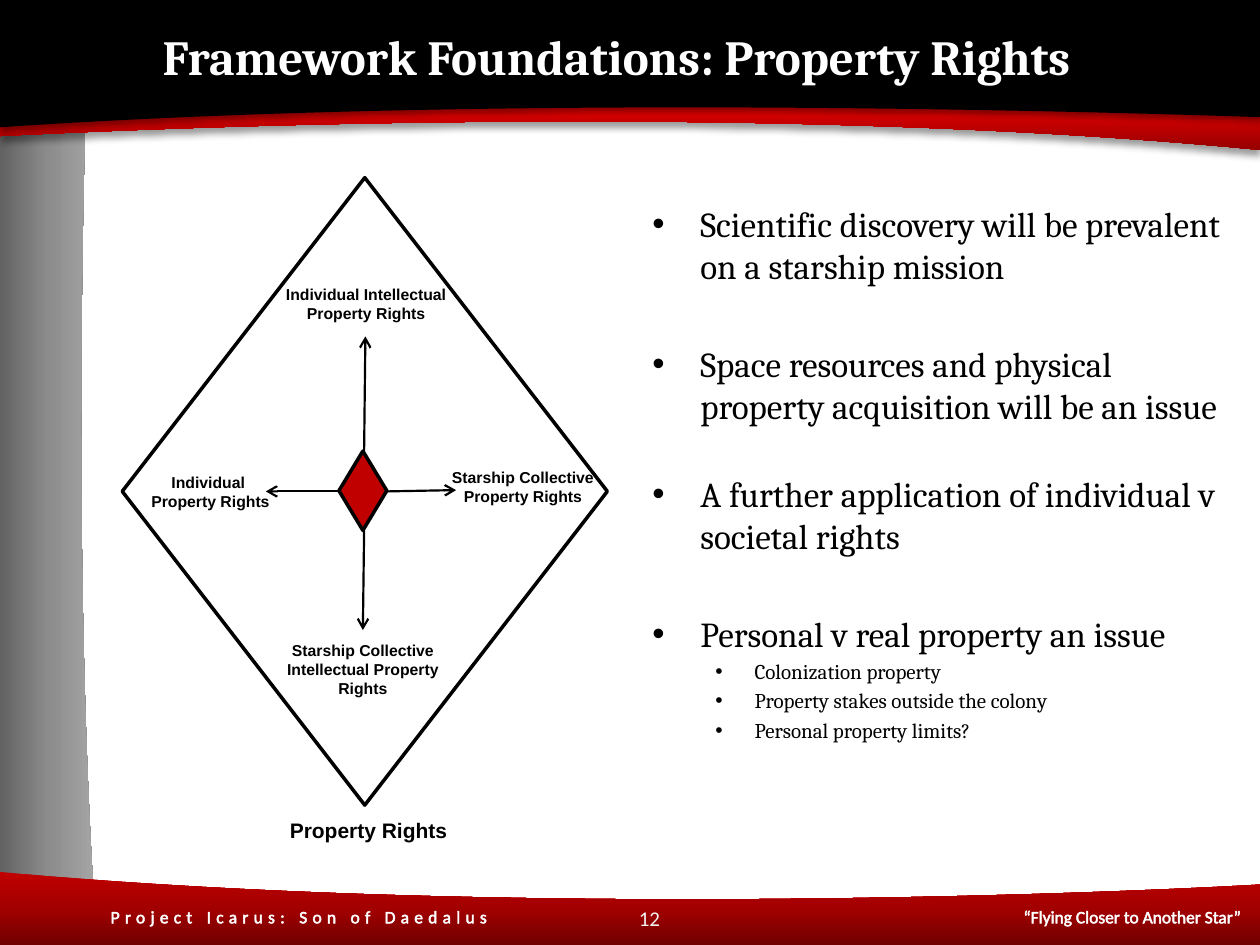
from lxml import etree
from pptx import Presentation
from pptx.dml.color import RGBColor
from pptx.enum.shapes import MSO_CONNECTOR as CONN, MSO_SHAPE as SHAPE
from pptx.enum.text import MSO_ANCHOR as ANCHOR, PP_ALIGN as ALIGN
from pptx.oxml import parse_xml
from pptx.oxml.ns import nsdecls, qn
from pptx.util import Inches, Pt

BLACK = RGBColor(0x00, 0x00, 0x00)
WHITE = RGBColor(0xFF, 0xFF, 0xFF)
PALE = RGBColor(0xF2, 0xF2, 0xF2)
RED = RGBColor(0xC0, 0x00, 0x00)
GREYS = ("626262", "8C8C8C", "A6A6A6")
TOP_REDS = ("FF0000", "D70000", "970000")
BOTTOM_REDS = ("C00000", "A20000", "720000")

prs = Presentation()
prs.slide_width, prs.slide_height = Inches(10), Inches(7.5)
s = prs.slides.add_slide(prs.slide_layouts[5])


def add_band(curve, corners, colors, angle=90, shadow=None):
    """Area between a cubic curve (four points) and the given corners."""
    points = [(Inches(x), Inches(y)) for x, y in curve + corners]
    builder = s.shapes.build_freeform(*points[0])
    builder.add_line_segments(points[1:], close=True)
    sp = builder.convert_to_shape()
    sp.shadow.inherit = False
    sp.line.fill.background()
    sp.fill.solid()
    sp.fill.fore_color.rgb = BLACK
    props = sp._element.spPr
    # The first three segments become one Bezier curve
    segments = list(props.iter(qn("a:lnTo")))[:3]
    bezier = etree.Element(qn("a:cubicBezTo"))
    segments[0].addprevious(bezier)
    for segment in segments:
        bezier.append(segment[0])
        segment.getparent().remove(segment)
    if colors:
        stops = "".join(f'<a:gs pos="{i * 50000}"><a:srgbClr val="{c}"/></a:gs>'
                        for i, c in enumerate(colors))
        props.replace(props.find(qn("a:solidFill")), parse_xml(
            f'<a:gradFill {nsdecls("a")}><a:gsLst>{stops}</a:gsLst>'
            f'<a:lin ang="{angle * 60000}" scaled="0"/></a:gradFill>'))
    if shadow:
        blur, dist, alpha = shadow
        props.find(qn("a:effectLst")).append(parse_xml(
            f'<a:outerShdw {nsdecls("a")} blurRad="{Pt(blur)}" dist="{Pt(dist)}" '
            f'dir="5400000" rotWithShape="0"><a:srgbClr val="000000">'
            f'<a:alpha val="{alpha * 1000}"/></a:srgbClr></a:outerShdw>'))


def add_text(text, x, y, w, h, size, font="Arial", color=BLACK, bold=False, align=ALIGN.CENTER):
    box = s.shapes.add_textbox(Inches(x), Inches(y), Inches(w), Inches(h))
    tf = box.text_frame
    tf.word_wrap = True
    tf.text = text
    for p in tf.paragraphs:
        p.alignment = align
        p.font.size, p.font.name, p.font.bold = Pt(size), font, bold
        p.font.color.rgb = color
    return tf


# Curved background bands
add_band([(0.71, 0), (0.67, 0.93), (0.56, 4.51), (0.77, 7.5)],
         [(0, 7.5), (0, 0)], GREYS, angle=0)
add_band([(0, 1.08), (1.21, 1.02), (6, 0.8), (10, 1.19)],
         [(10, 0.59), (0, 0.59)], TOP_REDS, shadow=(4, 3, 40))
add_band([(10, 0.93), (8.77, 0.89), (3.99, 0.74), (0, 1.01)],
         [(0, 0), (10, 0)], None, shadow=(3.1, 1.6, 38))
add_band([(10, 7.02), (8.79, 7.09), (4, 7.29), (0, 6.92)],
         [(0, 7.5), (10, 7.5)], BOTTOM_REDS)

# Footer, with the motto on a right tab
tf = add_text("", 0.78, 7.14, 9.22, 0.27, 10, "Calibri", WHITE, align=ALIGN.LEFT)
p = tf.paragraphs[0]
p._p.pPr.find(qn("a:defRPr")).addprevious(parse_xml(
    f'<a:tabLst {nsdecls("a")}><a:tab pos="{Inches(8.97)}" algn="r"/></a:tabLst>'))
for text, spacing in [("Project Icarus: Son of Daedalus", 300),
                      ("\t“Flying Closer to Another Star”", 0)]:
    r = p.add_run()
    r.text = text
    rPr = r._r.get_or_add_rPr()
    rPr.set("spc", str(spacing))
    rPr.insert(0, parse_xml(
        f'<a:ln {nsdecls("a")} w="{Pt(0.25)}"><a:solidFill>'
        f'<a:srgbClr val="{WHITE}"/></a:solidFill></a:ln>'))

# Title, brought in front of the bands
title = s.shapes.title
title._element.getparent().append(title._element)
title.left, title.top = Inches(1.19), Inches(0.13)
title.width, title.height = Inches(8.32), Inches(0.62)
tf = title.text_frame
tf.text = "Framework Foundations: Property Rights"
tf.vertical_anchor = ANCHOR.MIDDLE
p = tf.paragraphs[0]
p.alignment = ALIGN.LEFT
p.font.size, p.font.name, p.font.bold = Pt(28), "Cambria", True
p.font.color.rgb = WHITE

# Bullets: text, size, space before, left margin, hanging indent
bullets = [
    ("Scientific discovery will be prevalent on a starship mission", 20, 0, 0.38, 0.38),
    ("Space resources and physical property acquisition will be an issue", 20, 32, 0.38, 0.38),
    ("A further application of individual v societal rights", 20, 26, 0.38, 0.38),
    ("Personal v real property an issue", 20, 32, 0.38, 0.38),
    ("Colonization property", 12, 2.4, 0.81, 0.31),
    ("Property stakes outside the colony", 12, 2.4, 0.81, 0.31),
    ("Personal property limits?", 12, 2.4, 0.81, 0.31),
]
tf = add_text("\n".join(b[0] for b in bullets), 5.08, 1.56, 4.78, 4.89, 20,
              "Cambria", align=ALIGN.LEFT)
for p, (_, size, before, margin, hang) in zip(tf.paragraphs, bullets):
    p.level = 1 if size == 12 else 0
    pPr = p._p.get_or_add_pPr()
    pPr.set("marL", str(Inches(margin)))
    pPr.set("indent", str(-Inches(hang)))
    bullet = parse_xml(f'<a:buChar {nsdecls("a")} char="•"/>')
    pPr.find(qn("a:defRPr")).addprevious(bullet)
    bullet.addprevious(parse_xml(f'<a:buFont {nsdecls("a")} typeface="Arial"/>'))
    p.space_before = Pt(before)
    p.font.size = Pt(size)

# Slide number
tf = add_text("12", 3.99, 7.15, 2.33, 0.27, 12, "Calibri", PALE)
tf.vertical_anchor = ANCHOR.MIDDLE

# Diamonds
for x, y, w, h, color in [(0.97, 1.41, 3.85, 4.98, None), (2.69, 3.58, 0.38, 0.63, RED)]:
    sp = s.shapes.add_shape(SHAPE.DIAMOND, Inches(x), Inches(y), Inches(w), Inches(h))
    sp.shadow.inherit = False
    sp.line.color.rgb, sp.line.width = BLACK, Pt(2)
    if color:
        sp.fill.solid()
        sp.fill.fore_color.rgb = color
    else:
        sp.fill.background()

# Arrows out of the small diamond
for ends in [(2.89, 3.58, 2.9, 2.67), (3.07, 3.9, 3.62, 3.89),
             (2.69, 3.9, 2.11, 3.9), (2.89, 4.21, 2.88, 5)]:
    arrow = s.shapes.add_connector(CONN.STRAIGHT, *map(Inches, ends))
    arrow.line.color.rgb, arrow.line.width = BLACK, Pt(1.25)
    etree.SubElement(arrow.line._get_or_add_ln(), qn("a:tailEnd"), type="arrow")
    etree.SubElement(arrow._element.spPr, qn("a:effectLst"))

# Diagram labels
for text, x, y, w, h, size in [
    ("Individual Intellectual Property Rights", 2.03, 2.21, 1.75, 0.4, 9),
    ("Individual \nProperty Rights", 0.91, 3.7, 1.52, 0.4, 9),
    ("Starship Collective Property Rights", 3.42, 3.66, 1.46, 0.4, 9),
    ("Property Rights", 2.05, 6.44, 1.75, 0.3, 12),
    ("Starship Collective Intellectual Property Rights", 2.15, 5.04, 1.46, 0.56, 9),
]:
    add_text(text, x, y, w, h, size, bold=True)

prs.save("out.pptx")
